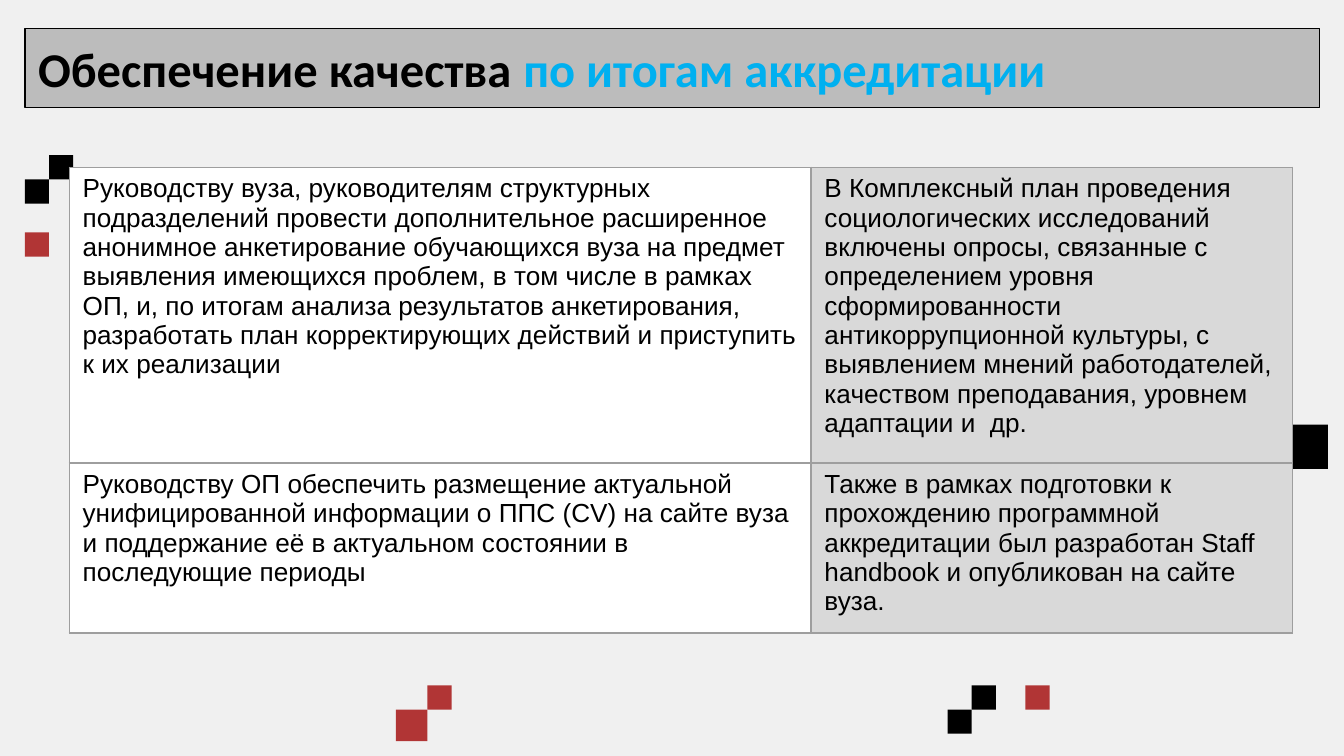
from lxml import etree
from pptx import Presentation
from pptx.dml.color import RGBColor
from pptx.enum.shapes import MSO_SHAPE
from pptx.enum.text import MSO_ANCHOR, PP_ALIGN
from pptx.oxml.ns import qn
from pptx.util import Pt

RECT = MSO_SHAPE.RECTANGLE
MIDDLE = MSO_ANCHOR.MIDDLE
LEFT = PP_ALIGN.LEFT

SCALE = 4572
BLACK, RED, BLUE = "000000", "B13535", "00B0F0"
PAPER, BAR, EDGE = "F0F0F0", "BCBCBC", "9E9E9E"
FILLS = ("FFFFFF", "D9D9D9")
COLS, ROWS = (1104, 716), (440, 253)
HEAD = {"name": "Calibri", "size": Pt(26), "bold": True}
BODY = {"name": "Arial", "size": Pt(14), "bold": False}

TITLE = (("Обеспечение качества ", BLACK), ("по итогам аккредитации", BLUE))
PLAN = (
    (
        "Руководству вуза, руководителям структурных подразделений провести "
        "дополнительное расширенное анонимное анкетирование обучающихся вуза "
        "на предмет выявления имеющихся проблем, в том числе в рамках ОП, и, "
        "по итогам анализа результатов анкетирования, разработать план "
        "корректирующих действий и приступить к их реализации",
        "В Комплексный план проведения социологических исследований включены "
        "опросы, связанные с определением уровня сформированности "
        "антикоррупционной культуры, с выявлением мнений работодателей, "
        "качеством преподавания, уровнем адаптации и  др.",
    ),
    (
        "Руководству ОП обеспечить размещение актуальной унифицированной "
        "информации о ППС (CV) на сайте вуза и поддержание её в актуальном "
        "состоянии в последующие периоды",
        "Также в рамках подготовки к прохождению программной аккредитации был "
        "разработан Staff handbook и опубликован на сайте вуза.",
    ),
)
GROUPS = (
    ((589, 1020), ((47, 0, 36, RED), (0, 36, 47, RED))),
    ((1410, 1020), ((0, 36, 36, BLACK), (36, 0, 36, BLACK), (116, 0, 36, RED))),
    ((1874, 632), ((0, 66, 36, RED), (36, 0, 66, BLACK))),
    ((37, 231), ((36, 0, 36, BLACK), (0, 36, 36, BLACK), (0, 115, 36, RED))),
)


def px(*nums):
    """Turn px lengths into EMU."""
    return [num * SCALE for num in nums]


def paint(fill, tone):
    """Give a fill one solid colour."""
    fill.solid()
    fill.fore_color.rgb = RGBColor.from_string(tone)


def block(slide, box, tone):
    """Draw a flat rectangle without a line."""
    shape = slide.shapes.add_shape(RECT, *px(*box))
    shape.shadow.inherit = False
    paint(shape.fill, tone)
    shape.line.fill.background()
    return shape


def write(para, text, tone, look):
    """Add a run in the given look."""
    run = para.add_run()
    run.text = text
    for key, value in look.items():
        setattr(run.font, key, value)
    paint(run.font.fill, tone)


def squares(slide, spot, parts):
    """Place a cluster of squares from its top left corner."""
    left, top = spot
    for x, y, side, tone in parts:
        block(slide, (left + x, top + y, side, side), tone)


def header(slide, box):
    """Draw the title bar."""
    bar = block(slide, box, BAR)
    paint(bar.line.fill, BLACK)
    bar.line.width = Pt(0.75)
    frame = bar.text_frame
    inset, = px(20)
    look = {"word_wrap": True, "vertical_anchor": MIDDLE}
    look.update({"margin_" + side: inset for side in ("left", "right", "top", "bottom")})
    for key, value in look.items():
        setattr(frame, key, value)
    para = frame.paragraphs[0]
    para.alignment = LEFT
    for text, tone in TITLE:
        write(para, text, tone, HEAD)


def border(cell):
    """Rule all four sides of a cell."""
    props = cell._tc.get_or_add_tcPr()
    for side in "LRTB":
        line = etree.SubElement(props, qn("a:ln" + side), w=str(Pt(0.75)))
        fill = etree.SubElement(line, qn("a:solidFill"))
        etree.SubElement(fill, qn("a:srgbClr"), val=EDGE)


def grid(slide, box):
    """Draw the table of advice and actions."""
    table = slide.shapes.add_table(len(ROWS), len(COLS), *px(*box)).table
    table.first_row = table.horz_banding = False
    for col, width in zip(table.columns, px(*COLS)):
        col.width = width
    for row, height, texts in zip(table.rows, px(*ROWS), PLAN):
        row.height = height
        for cell, text, tone in zip(row.cells, texts, FILLS):
            border(cell)
            paint(cell.fill, tone)
            write(cell.text_frame.paragraphs[0], text, BLACK, BODY)


def main():
    """Build and save the slide."""
    deck = Presentation()
    deck.slide_width, deck.slide_height = px(2000, 1125)
    slide = deck.slides.add_slide(deck.slide_layouts[6])
    paint(slide.background.fill, PAPER)
    for spot, parts in GROUPS:
        squares(slide, spot, parts)
    header(slide, (37, 42, 1927, 118))
    grid(slide, (103, 249, sum(COLS), sum(ROWS)))
    deck.save("out.pptx")


if __name__ == "__main__":
    main()
